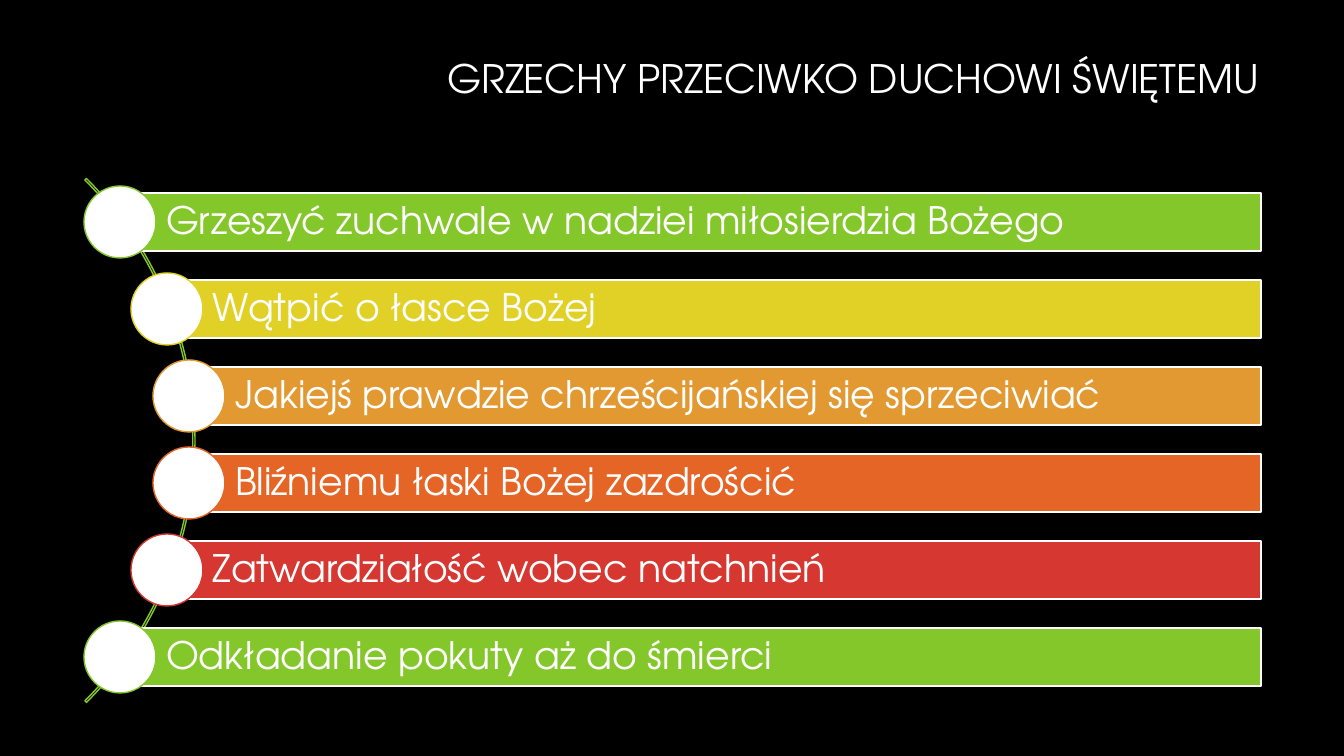
from pptx import Presentation
from pptx.dml.color import RGBColor
from pptx.enum.shapes import MSO_SHAPE
from pptx.enum.text import MSO_ANCHOR, PP_ALIGN
from pptx.util import Emu, Pt

RECT, OVAL, ARC = MSO_SHAPE.RECTANGLE, MSO_SHAPE.OVAL, MSO_SHAPE.BLOCK_ARC
MIDDLE = MSO_ANCHOR.MIDDLE
LEFT, RIGHT = PP_ALIGN.LEFT, PP_ALIGN.RIGHT

FONT = "TeX Gyre Adventor"
BLACK, WHITE, GREEN = "000000", "FFFFFF", "84C72A"

# Text, colour and left edge of each bar
SINS = [
    ("Grzeszyć zuchwale w nadziei miłosierdzia Bożego", GREEN, 120),
    ("Wątpić o łasce Bożej", "E1D126", 167),
    ("Jakiejś prawdzie chrześcijańskiej się sprzeciwiać", "E29932", 189),
    ("Bliźniemu łaski Bożej zazdrościć", "E56526", 189),
    ("Zatwardziałość wobec natchnień", "D63731", 167),
    ("Odkładanie pokuty aż do śmierci", GREEN, 120),
]
BAR_TOP, BAR_PITCH, BAR_HEIGHT, BAR_RIGHT = 193, 87, 58, 1261
DOT = 72


def px(n):
    return Emu(round(n * 914400 / 100.8))


def color(value):
    return RGBColor.from_string(value)


def write(tf, text, size=27, fill=WHITE, align=LEFT, insets=(10, 5, 10, 5)):
    tf.word_wrap = True
    tf.vertical_anchor = MIDDLE
    tf.margin_left, tf.margin_top, tf.margin_right, tf.margin_bottom = map(px, insets)
    p = tf.paragraphs[0]
    p.alignment = align
    p.line_spacing = 0.9
    r = p.add_run()
    r.text = text
    r.font.name = FONT
    r.font.size = Pt(size)
    r.font.color.rgb = color(fill)


class Deck:
    def __init__(self):
        self.prs = Presentation()
        self.prs.slide_width, self.prs.slide_height = px(1344), px(756)
        self.s = self.prs.slides.add_slide(self.prs.slide_layouts[6])
        self.s.background.fill.solid()
        self.s.background.fill.fore_color.rgb = color(BLACK)

    def text(self, x, y, w, h, text, **fmt):
        sp = self.s.shapes.add_textbox(px(x), px(y), px(w), px(h))
        write(sp.text_frame, text, **fmt)

    def shape(self, kind, x, y, w, h, line, fill=None):
        sp = self.s.shapes.add_shape(kind, px(x), px(y), px(w), px(h))
        sp.shadow.inherit = False
        if fill:
            sp.fill.solid()
            sp.fill.fore_color.rgb = color(fill)
        else:
            sp.fill.background()
        sp.line.color.rgb = color(line)
        sp.line.width = Pt(1)
        return sp

    def arc(self, x, y, size, adjustments):
        sp = self.shape(ARC, x, y, size, size, GREEN)
        for i, value in enumerate(adjustments):
            sp.adjustments[i] = value

    def bar(self, x, y, text, fill):
        sp = self.shape(RECT, x, y, BAR_RIGHT - x, BAR_HEIGHT, WHITE, fill)
        write(sp.text_frame, text, insets=(46, 7, 7, 7))

    def dot(self, cx, cy, line):
        self.shape(OVAL, cx - DOT / 2, cy - DOT / 2, DOT, DOT, line, WHITE)


def main():
    deck = Deck()

    # Title
    deck.text(320, 41, 949, 80, "GRZECHY PRZECIWKO DUCHOWI ŚWIĘTEMU",
              size=28, align=RIGHT)

    # Curve behind the list, from 315 to 45 degrees
    deck.arc(-546, 70, 741, (189, 27, 0.003))

    # Bars with a dot on their left edge
    for i, (text, fill, x) in enumerate(SINS):
        y = BAR_TOP + i * BAR_PITCH
        deck.bar(x, y, text, fill)
        deck.dot(x, y + BAR_HEIGHT / 2, fill)

    deck.prs.save("out.pptx")


if __name__ == "__main__":
    main()
